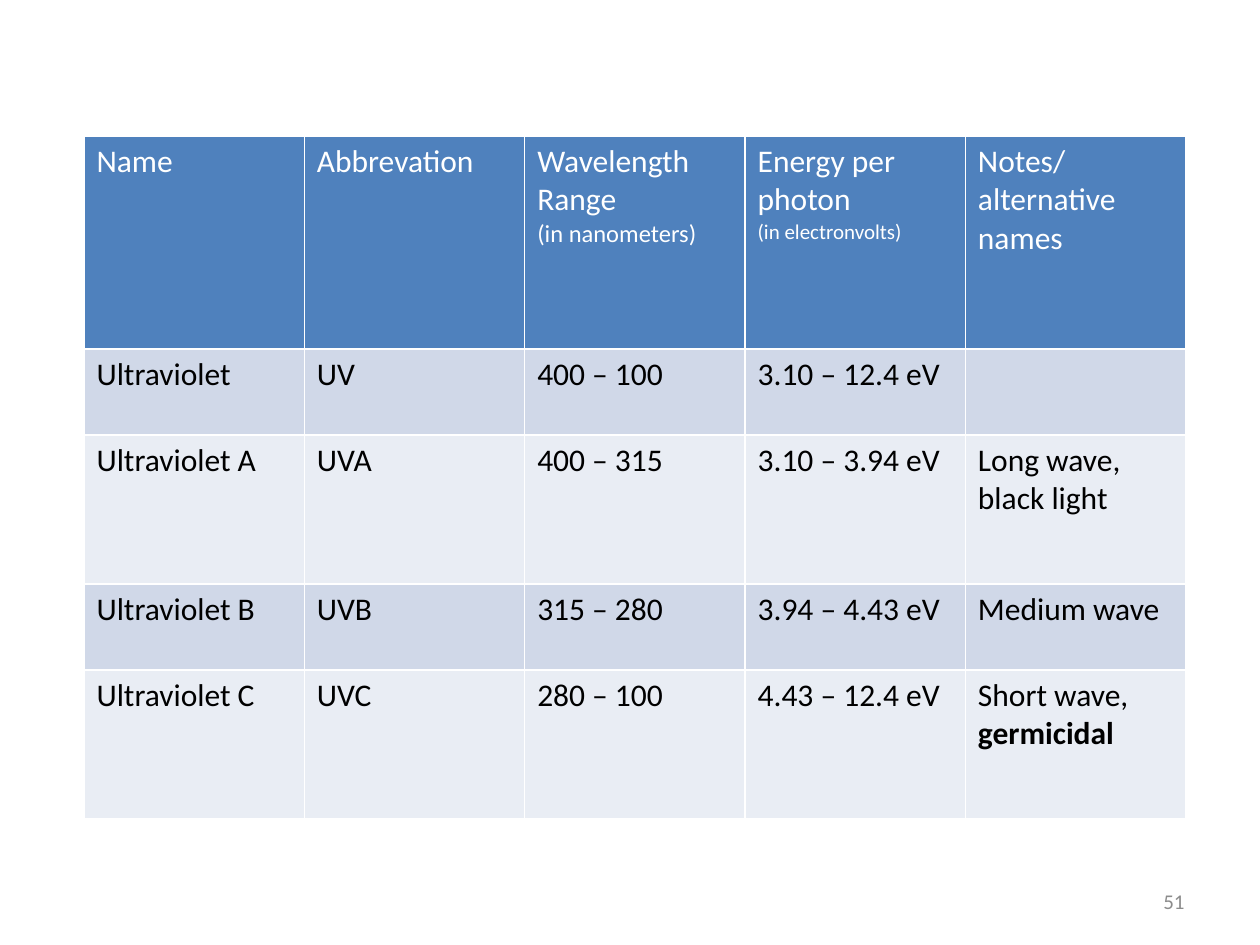
from pptx import Presentation
from pptx.dml.color import RGBColor
from pptx.enum.text import MSO_ANCHOR, PP_ALIGN
from pptx.util import Pt

PX = 914400 / 126
FONT = "Calibri"
RIGHT = PP_ALIGN.RIGHT
MIDDLE = MSO_ANCHOR.MIDDLE
COLORS = {
    "header": "4F81BD",
    "odd_row": "D0D8E8",
    "even_row": "E9EDF4",
    "header_text": "FFFFFF",
    "body_text": "000000",
    "page_number": "8C8C8C",
}
ROWS = [
    ["Name", "Abbrevation", "Wavelength Range\n(in nanometers)",
     "Energy per photon\n(in electronvolts)", "Notes/ alternative names"],
    ["Ultraviolet", "UV", "400 – 100", "3.10 – 12.4 eV", ""],
    ["Ultraviolet A", "UVA", "400 – 315", "3.10 – 3.94 eV", "Long wave, black light"],
    ["Ultraviolet B", "UVB", "315 – 280", "3.94 – 4.43 eV", "Medium wave"],
    ["Ultraviolet C", "UVC", "280 – 100", "4.43 – 12.4 eV", "Short wave, "],
]
ROW_HEIGHTS = [213, 86, 149, 86, 149]
UNIT_SIZES = {2: 14, 3: 12}


def px(length):
    return round(length * PX)


def style(font, size, color):
    font.name = FONT
    font.size = Pt(size)
    font.color.rgb = RGBColor.from_string(COLORS[color])


deck = Presentation()
deck.slide_width = px(1260)
deck.slide_height = px(945)
page = deck.slides.add_slide(deck.slide_layouts[6])

table = page.shapes.add_table(
    len(ROWS), len(ROWS[0]), px(84), px(136), px(1102), px(sum(ROW_HEIGHTS))
).table

for row_index, texts in enumerate(ROWS):
    table.rows[row_index].height = px(ROW_HEIGHTS[row_index])
    is_header = row_index == 0
    fill = "header" if is_header else "odd_row" if row_index % 2 else "even_row"
    text_color = "header_text" if is_header else "body_text"
    for column_index, text in enumerate(texts):
        cell = table.cell(row_index, column_index)
        cell.fill.solid()
        cell.fill.fore_color.rgb = RGBColor.from_string(COLORS[fill])
        cell.text = text
        for para_index, para in enumerate(cell.text_frame.paragraphs):
            size = UNIT_SIZES[column_index] if para_index else 18
            style(para.font, size, text_color)
            for span in para.runs:
                style(span.font, size, text_color)
                span.font.bold = False

span = table.cell(4, 4).text_frame.paragraphs[0].add_run()
span.text = "germicidal"
style(span.font, 18, "body_text")
span.font.bold = True

box = page.shapes.add_textbox(px(903), px(876), px(294), px(50))
box.text_frame.word_wrap = True
box.text_frame.vertical_anchor = MIDDLE
para = box.text_frame.paragraphs[0]
para.text = "51"
para.alignment = RIGHT
style(para.font, 12, "page_number")

deck.save("out.pptx")
